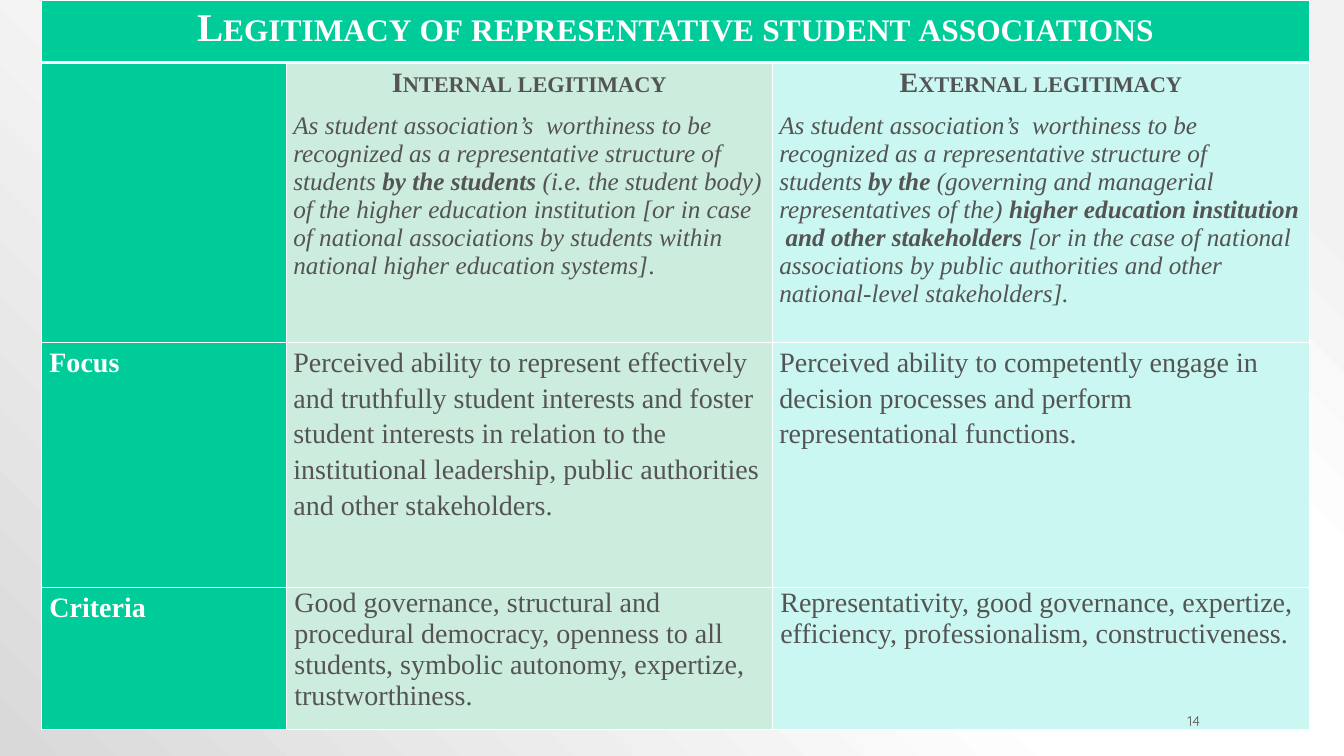
from lxml import etree
from pptx import Presentation
from pptx.dml.color import RGBColor
from pptx.enum.text import MSO_ANCHOR, PP_ALIGN
from pptx.oxml.ns import qn
from pptx.util import Inches, Pt

LEFT, CENTER, RIGHT, JUSTIFY = PP_ALIGN.LEFT, PP_ALIGN.CENTER, PP_ALIGN.RIGHT, PP_ALIGN.JUSTIFY
MIDDLE = MSO_ANCHOR.MIDDLE

WHITE = RGBColor(0xFF, 0xFF, 0xFF)
GRAY = RGBColor(0x54, 0x54, 0x54)
GREEN = RGBColor(0x00, 0xCC, 0x99)
PALE_GREEN = RGBColor(0xCC, 0xEC, 0xDE)
PALE_CYAN = RGBColor(0xCA, 0xF7, 0xF1)
COLUMN_FILLS = [GREEN, PALE_GREEN, PALE_CYAN]
BACKGROUND_STOPS = [(10, "F2F2F2"), (28, "FFFFFF"), (48, "FFFFFF"), (100, "D9D9D9")]

COLUMN_WIDTHS = [2.43, 4.82, 5.33]
ROW_HEIGHTS = [0.62, 2.78, 2.43, 1.41]

TITLE = "Legitimacy of representative student associations"
DEFINITION_START = ("As student association’s  worthiness to be recognized as a "
                    "representative structure of  students ")
# Each definition is a list of (text, format) pieces
DEFINITIONS = [
    ("Internal legitimacy", [
        (DEFINITION_START, {}),
        ("by the students ", {"bold": True}),
        ("(i.e. the student body) of the higher education institution [or in case of "
         "national associations by students within national higher education systems]", {}),
        (".", {"italic": False}),
    ]),
    ("External legitimacy", [
        (DEFINITION_START, {}),
        ("by the ", {"bold": True}),
        ("(governing and managerial representatives of the) ", {}),
        ("higher education institution  and other stakeholders", {"bold": True}),
        (" [or in the case of national associations by public authorities and other "
         "national-level stakeholders].", {}),
    ]),
]
FOCUS = [
    "Perceived ability to represent effectively and truthfully student interests and foster "
    "student interests in relation to the institutional leadership, public authorities and "
    "other stakeholders.",
    "Perceived ability to competently engage in decision processes and perform "
    "representational functions.",
]
CRITERIA = [
    "Good governance, structural and procedural democracy, openness to all students, "
    "symbolic autonomy, expertize, trustworthiness.",
    "Representativity, good governance, expertize, efficiency, professionalism, "
    "constructiveness.",
]


def add_text(paragraph, text, size=20, color=GRAY, bold=False, italic=False,
             small_caps=False, font="Times New Roman", align=LEFT, spaced=False):
    """Append a formatted run to a paragraph."""
    paragraph.alignment = align
    if spaced:
        paragraph.line_spacing = 1.15
        paragraph.space_after = Pt(10)
    run = paragraph.add_run()
    run.text = text
    run.font.name = font
    run.font.size = Pt(size)
    run.font.color.rgb = color
    run.font.bold = bold
    run.font.italic = italic
    if small_caps:
        run._r.get_or_add_rPr().set("cap", "small")


def set_borders(cell, top=1, bottom=1):
    """Draw white cell borders, with widths in points."""
    properties = cell._tc.get_or_add_tcPr()
    widths = {"a:lnL": 1, "a:lnR": 1, "a:lnT": top, "a:lnB": bottom}
    for index, (tag, width) in enumerate(widths.items()):
        line = etree.Element(qn(tag), w=str(Pt(width)))
        fill = etree.SubElement(line, qn("a:solidFill"))
        etree.SubElement(fill, qn("a:srgbClr"), val=str(WHITE))
        properties.insert(index, line)


def set_background(slide):
    """Fill the slide with a circular gradient centred on the top right corner."""
    fill = slide.background.fill
    fill.gradient()
    gradient = slide.background._cSld.find(".//" + qn("a:gradFill"))
    for child in list(gradient):
        gradient.remove(child)
    stops = etree.SubElement(gradient, qn("a:gsLst"))
    for position, color in BACKGROUND_STOPS:
        stop = etree.SubElement(stops, qn("a:gs"), pos=str(position * 1000))
        etree.SubElement(stop, qn("a:srgbClr"), val=color)
    circle = etree.SubElement(gradient, qn("a:path"), path="circle")
    etree.SubElement(circle, qn("a:fillToRect"), l="100000", b="100000")


def format_cells(table):
    """Set fills, margins and borders of every cell."""
    for row_index, row in enumerate(table.rows):
        for column_index, cell in enumerate(row.cells):
            inset = 0.08 if row_index == 3 or (row_index == 2 and column_index == 0) else 0.07
            cell.margin_left = cell.margin_right = Inches(inset)
            cell.margin_top = cell.margin_bottom = 0
            cell.fill.solid()
            cell.fill.fore_color.rgb = GREEN if row_index == 0 else COLUMN_FILLS[column_index]
            set_borders(cell, top=3 if row_index == 1 else 1, bottom=3 if row_index == 0 else 1)


def add_legitimacy_table(slide, left, top):
    frame = slide.shapes.add_table(
        len(ROW_HEIGHTS), len(COLUMN_WIDTHS), Inches(left), Inches(top),
        Inches(sum(COLUMN_WIDTHS)), Inches(sum(ROW_HEIGHTS)))
    table = frame.table
    table.horz_banding = False
    for column, width in zip(table.columns, COLUMN_WIDTHS):
        column.width = Inches(width)
    for row, height in zip(table.rows, ROW_HEIGHTS):
        row.height = Inches(height)
    format_cells(table)

    # Heading across all columns
    table.cell(0, 0).merge(table.cell(0, 2))
    add_text(table.cell(0, 0).text_frame.paragraphs[0], TITLE, size=28, color=WHITE,
             bold=True, small_caps=True, align=CENTER, spaced=True)

    # Definitions
    for column_index, (heading, pieces) in enumerate(DEFINITIONS, start=1):
        text_frame = table.cell(1, column_index).text_frame
        add_text(text_frame.paragraphs[0], heading, bold=True, small_caps=True,
                 align=CENTER, spaced=True)
        paragraph = text_frame.add_paragraph()
        for text, style in pieces:
            add_text(paragraph, text, **{"size": 18, "italic": True, **style})

    # Focus and criteria
    for row_index, label, texts, spaced in [(2, "Focus", FOCUS, True),
                                            (3, "Criteria", CRITERIA, False)]:
        add_text(table.cell(row_index, 0).text_frame.paragraphs[0], label,
                 color=WHITE, bold=True, align=JUSTIFY, spaced=True)
        for column_index, text in enumerate(texts, start=1):
            add_text(table.cell(row_index, column_index).text_frame.paragraphs[0], text,
                     spaced=spaced)


def add_page_number(slide, left, top, width, height):
    box = slide.shapes.add_textbox(Inches(left), Inches(top), Inches(width), Inches(height))
    box.text_frame.word_wrap = True
    box.text_frame.vertical_anchor = MIDDLE
    add_text(box.text_frame.paragraphs[0], "14", size=10, font="Quicksand", align=RIGHT)


def main():
    presentation = Presentation()
    presentation.slide_width = Inches(13.33)
    presentation.slide_height = Inches(7.5)
    slide = presentation.slides.add_slide(presentation.slide_layouts[6])
    set_background(slide)
    add_legitimacy_table(slide, 0.41, 0)
    add_page_number(slide, 10.75, 7.05, 1.25, 0.2)
    presentation.save("out.pptx")


if __name__ == "__main__":
    main()
